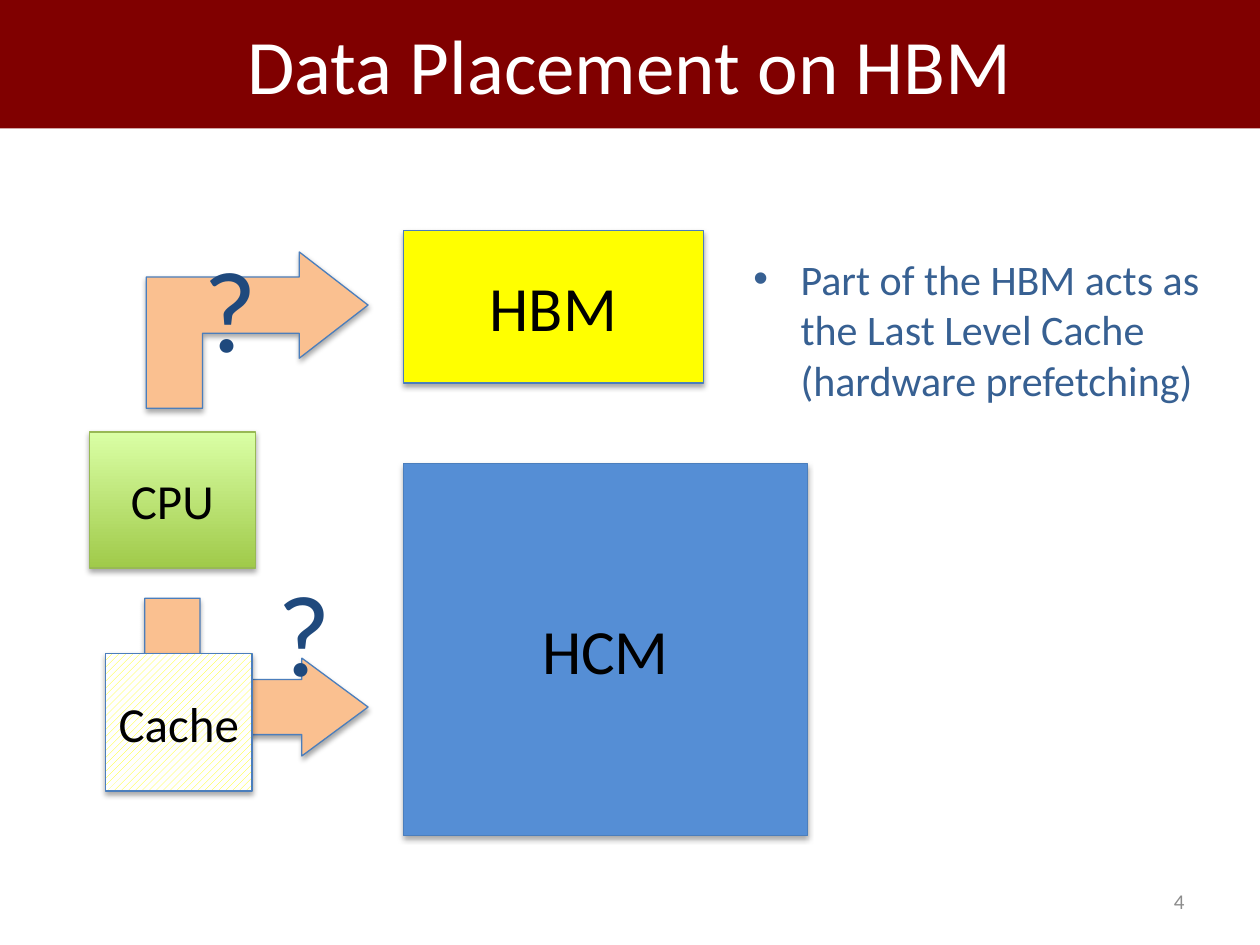
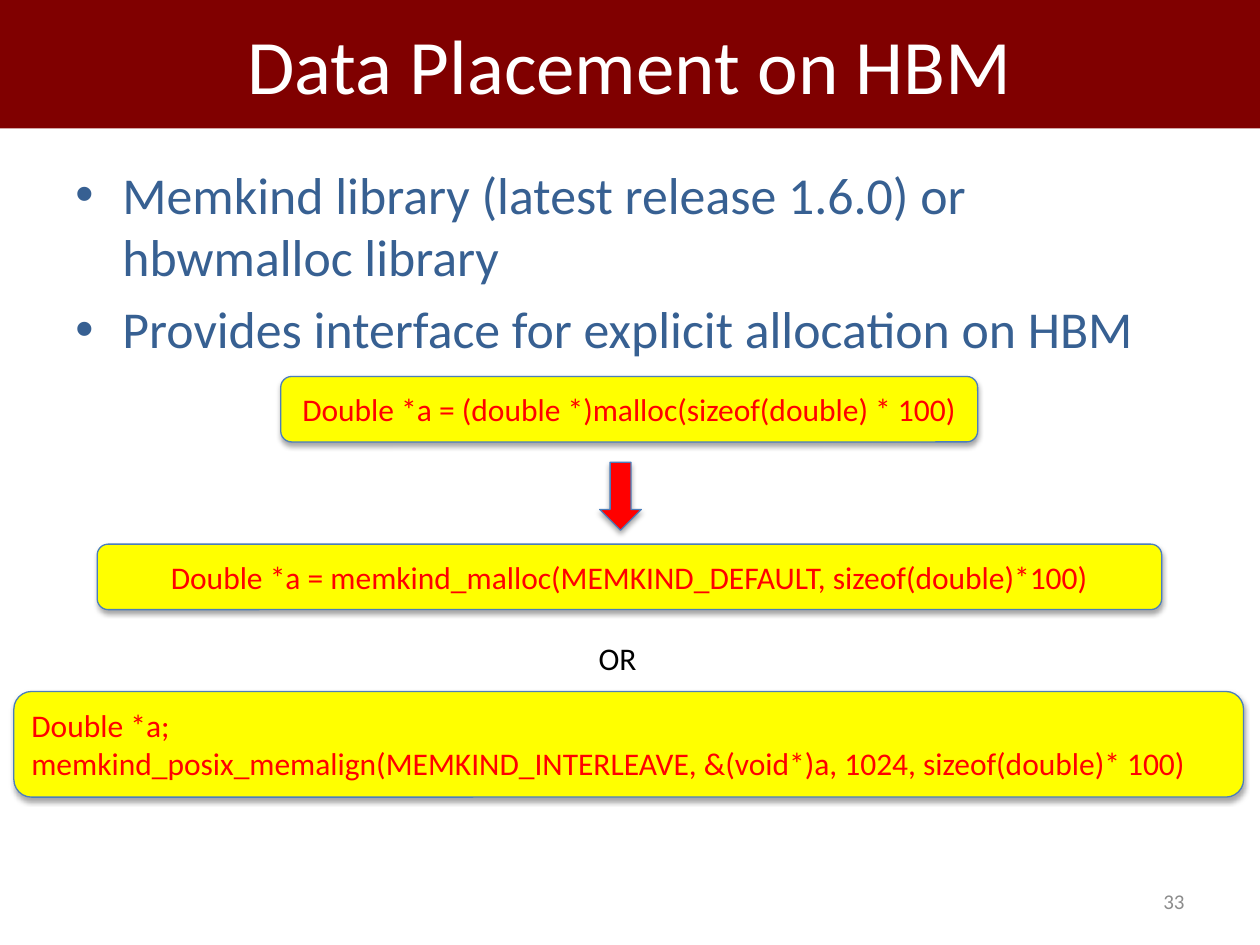
from lxml import etree
from pptx import Presentation
from pptx.dml.color import RGBColor
from pptx.enum.dml import MSO_PATTERN
from pptx.enum.shapes import MSO_SHAPE
from pptx.enum.text import MSO_ANCHOR, PP_ALIGN
from pptx.oxml import parse_xml
from pptx.oxml.ns import nsdecls, qn
from pptx.util import Cm, Pt

RECT = MSO_SHAPE.RECTANGLE
ROUND_RECT = MSO_SHAPE.ROUNDED_RECTANGLE
BENT_ARROW = MSO_SHAPE.BENT_ARROW
BENT_UP_ARROW = MSO_SHAPE.BENT_UP_ARROW
DOWN_ARROW = MSO_SHAPE.DOWN_ARROW
WIDE_UP_DIAGONAL = MSO_PATTERN.WIDE_UPWARD_DIAGONAL
LEFT, CENTER, RIGHT = PP_ALIGN.LEFT, PP_ALIGN.CENTER, PP_ALIGN.RIGHT
TOP, MIDDLE = MSO_ANCHOR.TOP, MSO_ANCHOR.MIDDLE

FONT = "Calibri"
MAROON, WHITE, BLACK = "800000", "FFFFFF", "000000"
YELLOW, RED, PEACH, BLUE = "FFFF00", "FF0000", "FAC090", "558ED5"
OUTLINE, GREEN_LINE = "4B7EBC", "98B955"
GREEN_DARK, GREEN_LIGHT = "A0CA4A", "DAFFA5"
BULLET_BLUE, QUESTION_BLUE, GRAY = "376092", "1F497D", "8C8C8C"

TITLE_BAND = (0, -0.03, 25.4, 2.62)
NUMBER_BOX = (18.21, 17.65, 5.92, 1.02)
BULLET_INDENT = Cm(0.95)
SHADOW = (
    f'<a:outerShdw {nsdecls("a")} blurRad="40000" dist="23000" dir="5400000" rotWithShape="0">'
    '<a:srgbClr val="000000"><a:alpha val="35000"/></a:srgbClr></a:outerShdw>'
)


def rgb(color):
    return RGBColor.from_string(color)


def cm(box):
    return [Cm(v) for v in box]


class Deck:
    def __init__(self):
        self.prs = Presentation()
        self.prs.slide_width, self.prs.slide_height = Cm(25.4), Cm(19.05)
        self.slide = None

    def new_slide(self, title, number):
        layout = self.prs.slide_layouts.get_by_name("Title Only")
        self.slide = self.prs.slides.add_slide(layout)
        sp = self.slide.shapes.title
        sp.left, sp.top, sp.width, sp.height = cm(TITLE_BAND)
        sp.fill.solid()
        sp.fill.fore_color.rgb = rgb(MAROON)
        self.fill_text(sp, [title], 44, WHITE)
        self.text(NUMBER_BOX, [number], 12, GRAY, RIGHT, MIDDLE)

    def fill_text(self, sp, lines, size, color, align=CENTER, anchor=MIDDLE, bullets=False):
        tf = sp.text_frame
        tf.word_wrap, tf.vertical_anchor = True, anchor
        for i, line in enumerate(lines):
            p = tf.add_paragraph() if i else tf.paragraphs[0]
            p.alignment = align
            if bullets:
                self.bullet(p)
                if i:
                    p.space_before = Pt(size * 0.2)
            r = p.add_run()
            r.text = line
            for name, value in {"name": FONT, "size": Pt(size)}.items():
                setattr(r.font, name, value)
            r.font.color.rgb = rgb(color)

    def bullet(self, p):
        pPr = p._p.get_or_add_pPr()
        pPr.set("marL", str(BULLET_INDENT))
        pPr.set("indent", str(-BULLET_INDENT))
        etree.SubElement(pPr, qn("a:buFont"), typeface="Arial")
        etree.SubElement(pPr, qn("a:buChar"), char="•")

    def text(self, box, lines, size, color, align=CENTER, anchor=TOP, bullets=False):
        sp = self.slide.shapes.add_textbox(*cm(box))
        self.fill_text(sp, lines, size, color, align, anchor, bullets)

    def bullets(self, box, lines, size):
        self.text(box, lines, size, BULLET_BLUE, LEFT, bullets=True)

    def shape(self, kind, box, fill=None, line=OUTLINE, adjust=(), rotation=0):
        """Add an outlined preset shape with a soft shadow below it."""
        sp = self.slide.shapes.add_shape(kind, *cm(box))
        sp.rotation = rotation
        for i, value in enumerate(adjust):
            sp.adjustments[i] = value
        if fill:
            sp.fill.solid()
            sp.fill.fore_color.rgb = rgb(fill)
        sp.line.color.rgb = rgb(line)
        sp.line.width = Pt(0.75)
        sp.shadow.inherit = False
        sp._element.spPr.find(qn("a:effectLst")).append(parse_xml(SHADOW))
        return sp

    def node(self, label, size, box, fill=None, line=OUTLINE):
        sp = self.shape(RECT, box, fill, line)
        self.fill_text(sp, [label], size, BLACK)
        return sp

    def code(self, box, lines, align=CENTER):
        self.fill_text(self.shape(ROUND_RECT, box, YELLOW), lines, 18, RED, align)


def memory_slide(deck):
    deck.new_slide("Data Placement on HBM", "4")
    deck.node("HCM", 36, (8.13, 9.35, 8.15, 7.49), BLUE)
    deck.shape(BENT_UP_ARROW, (3.58, 11.4, 3.18, 4.5), PEACH,
               adjust=(0.35, 0.31, 0.42), rotation=90)

    cpu = deck.node("CPU", 28, (1.8, 8.71, 3.35, 2.74), line=GREEN_LINE)
    cpu.fill.gradient()
    cpu.fill.gradient_angle = 90
    for stop, color, position in zip(cpu.fill.gradient_stops, (GREEN_DARK, GREEN_LIGHT), (0, 1)):
        stop.color.rgb = rgb(color)
        stop.position = position

    deck.node("HBM", 36, (8.13, 4.65, 6.05, 3.07), YELLOW)
    deck.shape(BENT_ARROW, (2.95, 5.08, 4.47, 3.15), PEACH, adjust=(0.36, 0.34, 0.44, 0))
    for left, top in ((3.51, 4.65), (5, 11.18)):
        deck.text((left, top, 2.26, 3.07), ["?"], 66, QUESTION_BLUE)
    deck.bullets((14.94, 4.98, 10.21, 3.33),
                 ["Part of the HBM acts as the Last Level Cache (hardware prefetching)"], 24)

    cache = deck.node("Cache", 28, (2.13, 13.18, 2.95, 2.77))
    cache.fill.patterned()
    cache.fill.pattern = WIDE_UP_DIAGONAL
    cache.fill.fore_color.rgb = rgb(YELLOW)
    cache.fill.back_color.rgb = rgb(WHITE)


def memkind_slide(deck):
    deck.new_slide("Data Placement on HBM", "33")
    deck.bullets((1.27, 3.15, 22.86, 4.8),
                 ["Memkind library (latest release 1.6.0) or hbwmalloc library",
                  "Provides interface for explicit allocation on HBM"], 29.6)
    deck.code((5.66, 7.59, 14.05, 1.32),
              ["Double *a = (double *)malloc(sizeof(double) * 100)"])
    deck.shape(DOWN_ARROW, (12.09, 9.32, 0.84, 1.37), RED)
    deck.code((1.96, 10.97, 21.46, 1.32),
              ["Double *a = memkind_malloc(MEMKIND_DEFAULT, sizeof(double)*100)"])
    deck.text((11.51, 12.75, 1.88, 1.02), ["OR"], 18, BLACK)
    deck.code((0.28, 13.94, 24.79, 2.13),
              ["Double *a;",
               "memkind_posix_memalign(MEMKIND_INTERLEAVE, &(void*)a, 1024, sizeof(double)* 100)"],
              LEFT)


def main():
    deck = Deck()
    memory_slide(deck)
    memkind_slide(deck)
    deck.prs.save("out.pptx")


if __name__ == "__main__":
    main()
